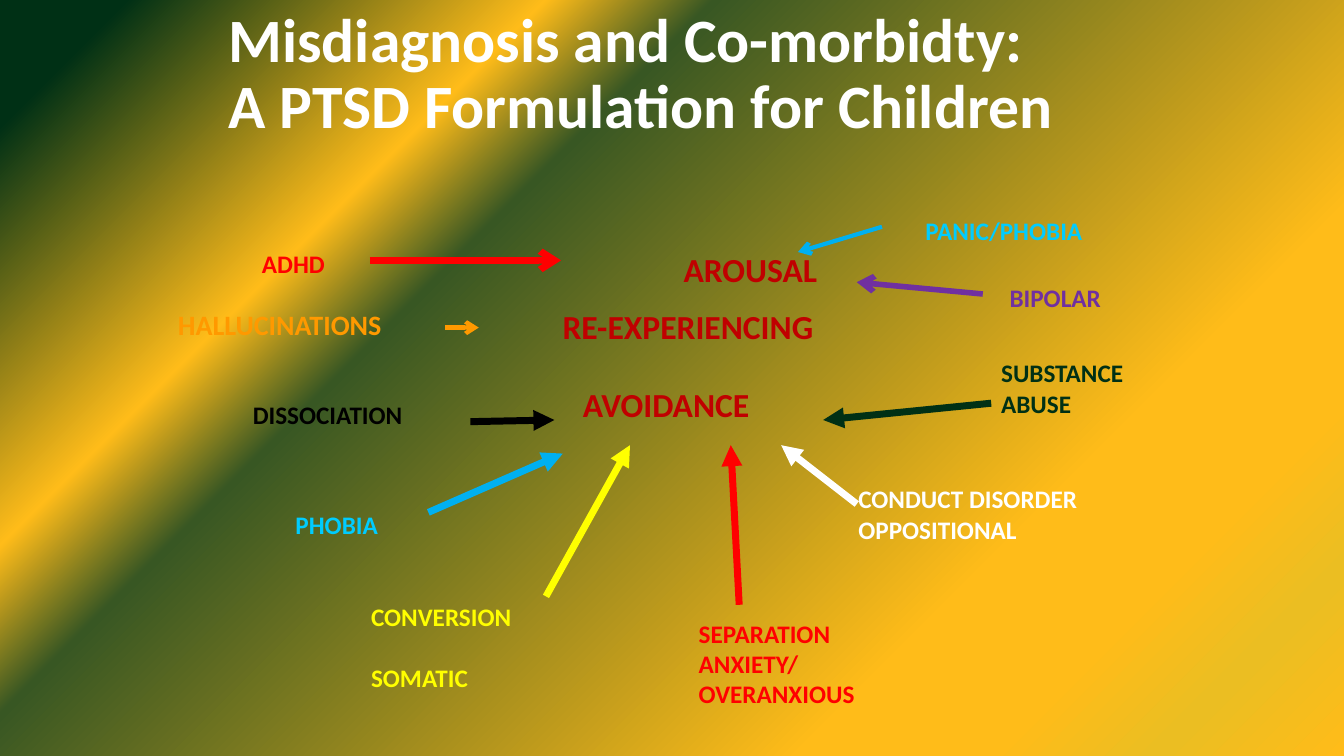
from lxml import etree
from pptx import Presentation
from pptx.dml.color import RGBColor
from pptx.enum.shapes import MSO_CONNECTOR
from pptx.enum.text import MSO_ANCHOR, MSO_AUTO_SIZE, PP_ALIGN
from pptx.oxml.ns import qn
from pptx.util import Inches, Pt

STRAIGHT = MSO_CONNECTOR.STRAIGHT
LEFT, CENTER = PP_ALIGN.LEFT, PP_ALIGN.CENTER
MIDDLE = MSO_ANCHOR.MIDDLE
NO_AUTOFIT = MSO_AUTO_SIZE.NONE
TITLE_ONLY = 5

WIDTH, HEIGHT = Inches(13.333), Inches(7.5)
COLUMNS, ROWS = 160, 90
FONT = "Calibri"

WHITE = RGBColor(0xFF, 0xFF, 0xFF)
BLACK = RGBColor(0x00, 0x00, 0x00)
RED = RGBColor(0xFF, 0x00, 0x00)
CRIMSON = RGBColor(0xC0, 0x00, 0x00)
ORANGE = RGBColor(0xFF, 0x99, 0x00)
YELLOW = RGBColor(0xFF, 0xFF, 0x00)
CYAN = RGBColor(0x00, 0xCC, 0xFF)
BLUE = RGBColor(0x00, 0xB0, 0xF0)
PURPLE = RGBColor(0x70, 0x30, 0xA0)
DARK_GREEN = RGBColor(0x00, 0x30, 0x15)
MID_GREEN = RGBColor(0x38, 0x57, 0x23)
GOLD = RGBColor(0xFF, 0xBC, 0x19)
OLIVE_GOLD = RGBColor(0xEB, 0xBE, 0x22)

BACKGROUND_STOPS = [
    (6, DARK_GREEN), (26, GOLD), (34, MID_GREEN), (74, GOLD),
    (83, GOLD), (91, OLIVE_GOLD), (100, GOLD),
]

SYMPTOMS = [
    ("AROUSAL", (80.2, 29, 24, 6)),
    ("RE-EXPERIENCING", (65.8, 35.8, 36, 6)),
    ("AVOIDANCE", (68.2, 45.1, 26, 6)),
]

DIAGNOSES = [
    (["ADHD"], (30, 29, 17, 4.8), RED),
    (["PHOBIA"], (34, 60, 17, 7), CYAN),
    (["PANIC/PHOBIA"], (109, 25, 29, 11), CYAN),
    (["BIPOLAR"], (119, 33, 15, 5), PURPLE),
    (["SUBSTANCE ABUSE"], (118, 42, 22, 8.8), DARK_GREEN),
    (["CONDUCT DISORDER", "OPPOSITIONAL"], (101, 57, 37, 7.3), WHITE),
    (["SEPARATION", "ANXIETY/", "OVERANXIOUS"], (82, 73, 28, 13), RED),
]

ARROWS = [
    ((56, 50.2), (66, 50), BLACK, 5, "triangle"),
    ((51, 61), (67, 54), BLUE, 5, "triangle"),
    ((65, 71), (75, 53), YELLOW, 5, "triangle"),
    ((102, 60), (93, 53), WHITE, 5, "triangle"),
    ((118, 48), (98, 50), DARK_GREEN, 5, "triangle"),
    ((88, 72), (87, 53), RED, 5, "triangle"),
    ((44, 31), (66.8, 31), RED, 4.75, "arrow"),
    ((117, 35), (102, 33.6), PURPLE, 4, "arrow"),
    ((53, 39), (57, 39), ORANGE, 3, "arrow"),
    ((105, 27), (95, 30), BLUE, 3, "arrow"),
]


def across(columns):
    return round(WIDTH * columns / COLUMNS)


def down(rows):
    return round(HEIGHT * rows / ROWS)


def place(area):
    left, top, width, height = area
    return across(left), down(top), across(width), down(height)


def style(para, size, color, align=LEFT):
    para.alignment = align
    para.font.name = FONT
    para.font.size = Pt(size)
    para.font.bold = True
    para.font.color.rgb = color


def paint_background(page):
    fill = page.background.fill
    fill.gradient()
    fill.gradient_angle = 315
    stops = page.background._cSld.find(".//" + qn("a:gsLst"))
    for stop in list(stops):
        stops.remove(stop)
    for percent, color in BACKGROUND_STOPS:
        stop = etree.SubElement(stops, qn("a:gs"), pos=str(percent * 1000))
        etree.SubElement(stop, qn("a:srgbClr"), val=str(color))
    stops.getparent().find(qn("a:lin")).set("scaled", "0")


def set_title(page, text, area):
    title = page.shapes.title
    title.left, title.top, title.width, title.height = place(area)
    frame = title.text_frame
    frame.text = text
    frame.word_wrap = True
    frame.auto_size = NO_AUTOFIT
    frame.vertical_anchor = MIDDLE
    para = frame.paragraphs[0]
    para.line_spacing = 0.9
    style(para, 44, WHITE)


def add_label(page, lines, area, color, size=18, align=LEFT, gap=0):
    box = page.shapes.add_textbox(*place(area))
    frame = box.text_frame
    frame.word_wrap = True
    frame.text = "\n".join(lines)
    for para in frame.paragraphs:
        style(para, size, color, align)
    for para in frame.paragraphs[1:]:
        para.space_before = Pt(gap)


def add_arrow(page, start, end, color, weight, head):
    arrow = page.shapes.add_connector(
        STRAIGHT, across(start[0]), down(start[1]), across(end[0]), down(end[1]))
    arrow.line.color.rgb = color
    arrow.line.width = Pt(weight)
    properties = arrow._element.spPr
    etree.SubElement(properties.find(qn("a:ln")), qn("a:tailEnd"), type=head)
    etree.SubElement(properties, qn("a:effectLst"))


def main():
    deck = Presentation()
    deck.slide_width, deck.slide_height = WIDTH, HEIGHT
    page = deck.slides.add_slide(deck.slide_layouts[TITLE_ONLY])
    paint_background(page)
    set_title(page, "Misdiagnosis and Co-morbidty:\vA PTSD Formulation for Children",
              (26, 1.5, 102, 15))
    for word, area in SYMPTOMS:
        add_label(page, [word], area, CRIMSON, size=24)
    for lines, area, color in DIAGNOSES:
        add_label(page, lines, area, color)
    add_label(page, ["HALLUCINATIONS"], (20, 36, 35, 5.3), ORANGE, size=20)
    add_label(page, ["DISSOCIATION"], (26, 47, 26, 6), BLACK, align=CENTER)
    add_label(page, ["CONVERSION", "SOMATIC"], (43, 71, 30, 12), YELLOW, gap=22)
    for arrow in ARROWS:
        add_arrow(page, *arrow)
    deck.save("out.pptx")


if __name__ == "__main__":
    main()
